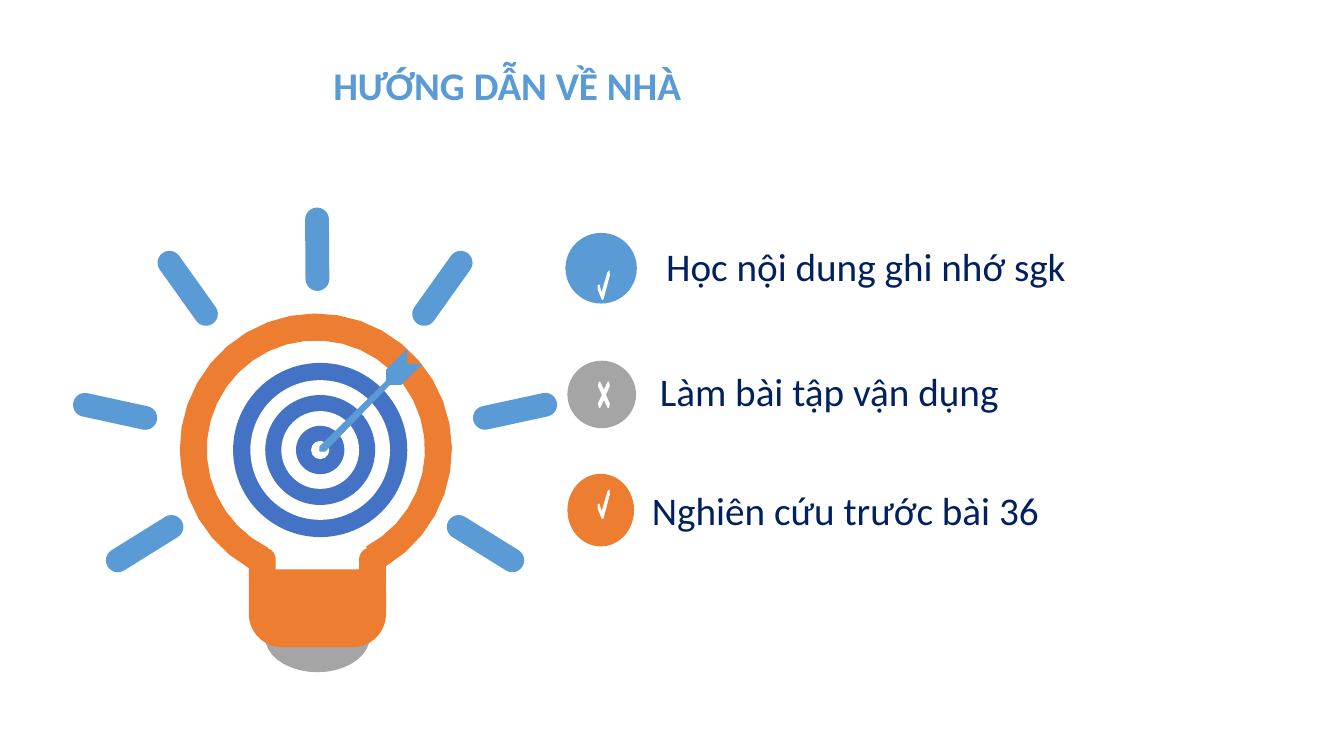
from math import atan2, cos, degrees, dist, radians, sin

from pptx import Presentation
from pptx.dml.color import RGBColor
from pptx.enum.shapes import MSO_SHAPE
from pptx.enum.text import MSO_AUTO_SIZE
from pptx.util import Cm, Pt

BLUE, ORANGE, GRAY = "5B9BD5", "ED7D31", "A5A5A5"
RING_BLUE, NAVY, WHITE = "4472C4", "002060", "FFFFFF"

BULB_X, BULB_Y = 7.96, 11.33
MIRROR_X = 7.94
RAY_WIDTH = 0.6
RIGHT_RAYS = [
    ((11.56, 13.28), (12.91, 14.12)),
    ((12.22, 10.53), (13.74, 10.2)),
    ((10.69, 7.91), (11.61, 6.62)),
]
TOP_RAY = ((8, 7.03), (7.99, 5.53))
RING_X, RING_Y = 8.07, 11.34
RING_DIAMETERS = [4.39, 3.52, 2.77, 1.96, 1.22, 0.46]
ARROW = [
    (9.83, 9.7), (10.11, 9.7), (10.64, 9.17), (10.26, 9.17), (10.26, 8.79),
    (9.73, 9.32), (9.73, 9.6), (8.05, 11.25), (8.05, 11.38), (8.2, 11.38),
]
TICK = [
    (0.13, 0.75), (0.1, 0.73), (0, 0.48), (0, 0.38), (0.05, 0.36),
    (0.1, 0.56), (0.25, 0.05), (0.3, 0), (0.31, 0.13), (0.15, 0.73),
]
CROSS_QUARTER = [
    (0.05, 0), (0.15, -0.22), (0.13, -0.32), (0.1, -0.34), (0, -0.13),
]


def color(hex_string):
    return RGBColor.from_string(hex_string)


def arc(x, y, radius_x, start, end, radius_y=None):
    """Points along an arc in degrees, running clockwise when end exceeds start."""
    radius_y = radius_y or radius_x
    steps = round(abs(end - start) / 10)
    angles = [radians(start + (end - start) * i / steps) for i in range(steps + 1)]
    return [(x + radius_x * cos(a), y + radius_y * sin(a)) for a in angles]


def moved(points, x, y):
    return [(x + dx, y + dy) for dx, dy in points]


def mirrored(points, sign_x, sign_y):
    return [(sign_x * x, sign_y * y) for x, y in points]


def cross_outline():
    quarter = CROSS_QUARTER
    return (quarter + mirrored(quarter, -1, 1)[::-1]
            + mirrored(quarter, -1, -1) + mirrored(quarter, 1, -1)[::-1])


class SlideBuilder:
    def __init__(self, slide, font="Calibri", size=28):
        self.slide = slide
        self.font = font
        self.size = size

    def paint(self, shape, fill):
        shape.shadow.inherit = False
        shape.fill.solid()
        shape.fill.fore_color.rgb = color(fill)
        shape.line.fill.background()

    def shape(self, kind, left, top, width, height, fill):
        shape = self.slide.shapes.add_shape(
            kind, Cm(left), Cm(top), Cm(width), Cm(height))
        self.paint(shape, fill)
        return shape

    def ellipse(self, left, top, width, height, fill):
        self.shape(MSO_SHAPE.OVAL, left, top, width, height, fill)

    def ray(self, start, end):
        """Bar with round ends whose end caps are centred on start and end."""
        length = dist(start, end) + RAY_WIDTH
        x, y = (start[0] + end[0]) / 2, (start[1] + end[1]) / 2
        bar = self.shape(MSO_SHAPE.ROUNDED_RECTANGLE, x - length / 2,
                         y - RAY_WIDTH / 2, length, RAY_WIDTH, BLUE)
        bar.adjustments[0] = 0.5
        bar.rotation = degrees(atan2(end[1] - start[1], end[0] - start[0]))

    def outline(self, fill, *contours):
        """Filled freeform; every contour after the first cuts a hole."""
        first, *holes = [[(Cm(x), Cm(y)) for x, y in c] for c in contours]
        builder = self.slide.shapes.build_freeform(*first[0])
        builder.add_line_segments(first[1:], close=True)
        for hole in holes:
            builder.move_to(*hole[0])
            builder.add_line_segments(hole[1:], close=True)
        self.paint(builder.convert_to_shape(), fill)

    def text(self, text, left, top, width, height=1.45, text_color=NAVY,
             bold=False, line_spacing=None, space_after=None):
        box = self.slide.shapes.add_textbox(
            Cm(left), Cm(top), Cm(width), Cm(height))
        frame = box.text_frame
        frame.word_wrap = False
        frame.auto_size = MSO_AUTO_SIZE.SHAPE_TO_FIT_TEXT
        paragraph = frame.paragraphs[0]
        if line_spacing:
            paragraph.line_spacing = Pt(line_spacing)
        if space_after:
            paragraph.space_after = Pt(space_after)
        run = paragraph.add_run()
        run.text = text
        run.font.name = self.font
        run.font.size = Pt(self.size)
        run.font.bold = bold
        run.font.color.rgb = color(text_color)


def draw_bulb(builder):
    builder.outline(GRAY, arc(8, 16.05, 1.32, 0, 180, radius_y=0.89))
    for start, end in RIGHT_RAYS:
        builder.ray(start, end)
        builder.ray((2 * MIRROR_X - start[0], start[1]),
                    (2 * MIRROR_X - end[0], end[1]))
    builder.ray(*TOP_RAY)
    body = (arc(BULB_X, BULB_Y, 3.43, 119.5, 419)
            + arc(8.89, 15.47, 0.84, 0, 90) + arc(7.11, 15.47, 0.84, 90, 180))
    opening = (arc(BULB_X, BULB_Y, 2.75, 116, 422.5)
               + arc(9.35, 14.1, 0.3, 250, 180) + [(9.05, 14.35), (6.95, 14.35)]
               + arc(6.65, 14.1, 0.3, 0, -70))
    builder.outline(ORANGE, body, opening)


def draw_target(builder):
    for index, diameter in enumerate(RING_DIAMETERS):
        builder.ellipse(RING_X - diameter / 2, RING_Y - diameter / 2,
                        diameter, diameter, WHITE if index % 2 else RING_BLUE)
    builder.outline(BLUE, ARROW)


def draw_tasks(builder):
    builder.text("Học nội dung ghi nhớ sgk", 16.54, 6.58, 10.87, 0.94,
                 line_spacing=16.5, space_after=15)
    builder.text("Làm bài tập vận dụng", 16.38, 9.12, 9.19)
    builder.text("Nghiên cứu trước bài 36", 16.18, 12.12, 10.26)
    builder.ellipse(14.25, 5.87, 1.8, 1.78, BLUE)
    builder.ellipse(14.3, 9.09, 1.73, 1.7, GRAY)
    builder.ellipse(14.3, 11.94, 1.68, 1.83, ORANGE)
    builder.outline(WHITE, moved(TICK, 15.06, 6.81))
    builder.outline(WHITE, moved(cross_outline(), 15.22, 9.95))
    builder.outline(WHITE, moved(TICK, 15.06, 12.33))


def main():
    presentation = Presentation()
    presentation.slide_width = Cm(33.87)
    presentation.slide_height = Cm(19.05)
    slide = presentation.slides.add_slide(presentation.slide_layouts[6])
    builder = SlideBuilder(slide)
    draw_bulb(builder)
    draw_target(builder)
    draw_tasks(builder)
    builder.text("HƯỚNG DẪN VỀ NHÀ", 8.15, 1.42, 10.9, text_color=BLUE, bold=True)
    presentation.save("out.pptx")


if __name__ == "__main__":
    main()
